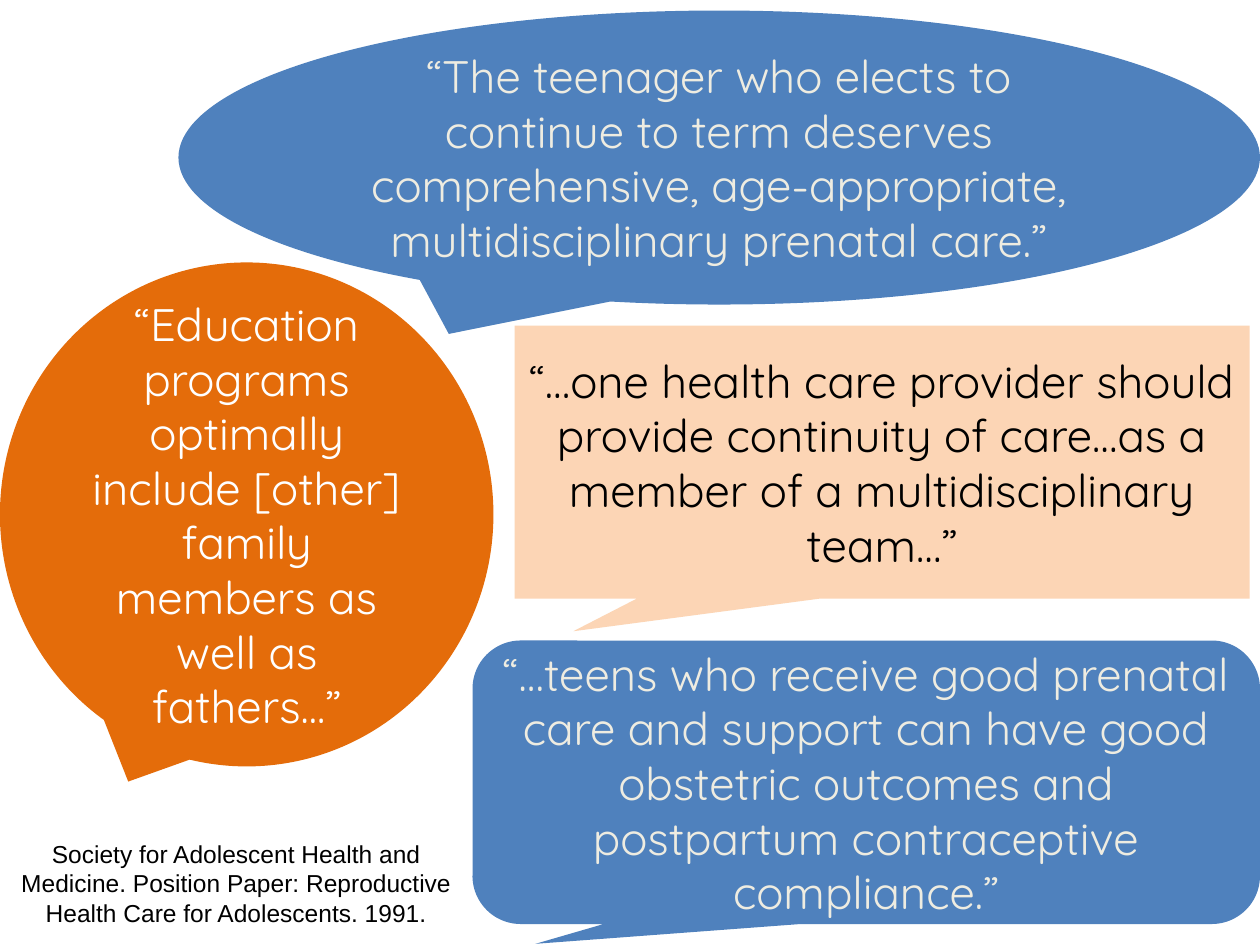
from pptx import Presentation
from pptx.dml.color import RGBColor
from pptx.enum.shapes import MSO_SHAPE as Shape
from pptx.enum.text import MSO_ANCHOR as Anchor, PP_ALIGN as Align
from pptx.util import Pt

PX = 914400 // 120  # slide grid: 120 px to the inch
COLORS = {"blue": "4F81BD", "peach": "FCD5B5", "orange": "E46C0A",
          "cream": "EEECE1", "black": "000000", "white": "FFFFFF"}

SOURCE = ("Society for Adolescent Health and Medicine. Position Paper: "
          "Reproductive Health Care for Adolescents. 1991.")
SOURCE_BOX = (0, 793, 450, 97)

# kind, box in px, adjustments, fill, text colour, quote
QUOTES = [
    (Shape.OVAL_CALLOUT, (170, 10, 1030, 280), (-0.25, 0.6), "blue", "cream",
     "“The teenager who elects to continue to term deserves comprehensive, "
     "age-appropriate, multidisciplinary prenatal care.”"),
    (Shape.RECTANGULAR_CALLOUT, (490, 310, 700, 260), (-0.42, 0.62), "peach", "black",
     "“…one health care provider should provide continuity of care…as a "
     "member of a multidisciplinary team…”"),
    (Shape.OVAL_CALLOUT, (0, 250, 470, 480), (-0.24, 0.53), "orange", "white",
     "“Education programs optimally include [other] family members as well "
     "as fathers...”"),
    (Shape.ROUNDED_RECTANGULAR_CALLOUT, (450, 610, 750, 270), (-0.42, 0.57, 0.17),
     "blue", "cream",
     "“…teens who receive good prenatal care and support can have good "
     "obstetric outcomes and postpartum contraceptive compliance.”"),
]


def rgb(name):
    return RGBColor.from_string(COLORS[name])


def emu(box):
    return [n * PX for n in box]


def write(shape, text, face, size, color):
    frame = shape.text_frame
    frame.word_wrap = True
    para = frame.paragraphs[0]
    para.alignment = Align.CENTER
    run = para.add_run()
    run.text = text
    run.font.name = face
    run.font.size = Pt(size)
    run.font.color.rgb = rgb(color)


def add_quote(slide, kind, box, adjust, fill, color, text):
    shape = slide.shapes.add_shape(kind, *emu(box))
    for i, value in enumerate(adjust):
        shape.adjustments[i] = value
    shape.shadow.inherit = False
    shape.fill.solid()
    shape.fill.fore_color.rgb = rgb(fill)
    shape.line.fill.background()
    shape.text_frame.vertical_anchor = Anchor.MIDDLE
    write(shape, text, "Quicksand", 26, color)


def main():
    deck = Presentation()
    deck.slide_width, deck.slide_height = emu((1200, 900))
    slide = deck.slides.add_slide(deck.slide_layouts[6])
    write(slide.shapes.add_textbox(*emu(SOURCE_BOX)), SOURCE, "Arial", 14, "black")
    for quote in QUOTES:
        add_quote(slide, *quote)
    deck.save("out.pptx")


if __name__ == "__main__":
    main()
